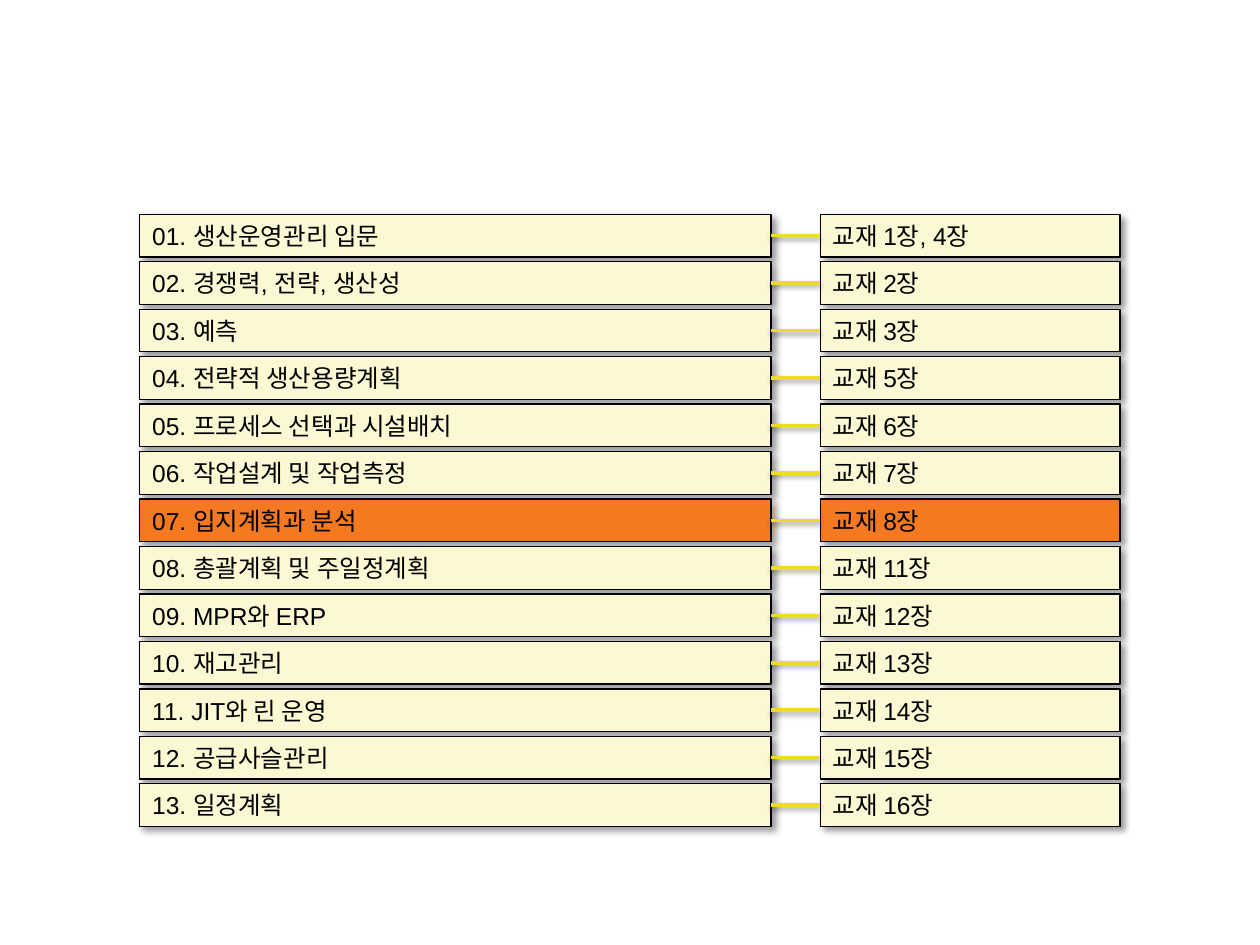
"""Build the course outline slide that pairs lectures with textbook chapters."""
from dataclasses import dataclass

from lxml import etree
from pptx import Presentation
from pptx.dml.color import RGBColor
from pptx.enum.shapes import MSO_CONNECTOR, MSO_SHAPE
from pptx.enum.text import MSO_ANCHOR, MSO_AUTO_SIZE, PP_ALIGN
from pptx.oxml.ns import qn
from pptx.util import Inches, Pt

RECTANGLE = MSO_SHAPE.RECTANGLE
STRAIGHT = MSO_CONNECTOR.STRAIGHT
LEFT = PP_ALIGN.LEFT
MIDDLE = MSO_ANCHOR.MIDDLE
GROW = MSO_AUTO_SIZE.SHAPE_TO_FIT_TEXT
LEFT_SITE, RIGHT_SITE = 1, 3


@dataclass(frozen=True)
class Theme:
    """Colours, type and line sizes of the slide."""
    ink: str = "000000"
    plain: str = "FCF8D4"
    current: str = "F47921"
    link: str = "EEDB28"
    font: str = "Arial"
    size: float = 14
    border: float = 0.75
    link_width: float = 2


THEME = Theme()
CURRENT_ROW = 6
OUTLINE = [
    ("생산운영관리 입문", "1장, 4장"),
    ("경쟁력, 전략, 생산성", "2장"),
    ("예측", "3장"),
    ("전략적 생산용량계획", "5장"),
    ("프로세스 선택과 시설배치", "6장"),
    ("작업설계 및 작업측정", "7장"),
    ("입지계획과 분석", "8장"),
    ("총괄계획 및 주일정계획", "11장"),
    ("MPR와 ERP", "12장"),
    ("재고관리", "13장"),
    ("JIT와 린 운영", "14장"),
    ("공급사슬관리", "15장"),
    ("일정계획", "16장"),
]


def cast_shadow(properties, opacity, blur, distance, angle):
    """Put an outer shadow in the effect list of the shape properties."""
    effects = properties.find(qn("a:effectLst"))
    if effects is None:
        effects = etree.SubElement(properties, qn("a:effectLst"))
    outer = etree.SubElement(
        effects, qn("a:outerShdw"), blurRad=str(Pt(blur)),
        dist=str(Pt(distance)), dir=str(angle * 60000), rotWithShape="0")
    colour = etree.SubElement(outer, qn("a:srgbClr"), val=THEME.ink)
    etree.SubElement(colour, qn("a:alpha"), val=str(opacity * 1000))


def write(frame, text, *, size=THEME.size, color=THEME.ink, font=THEME.font,
          align=LEFT, anchor=MIDDLE):
    """Write one formatted paragraph in a text frame."""
    frame.word_wrap = True
    frame.auto_size = GROW
    frame.vertical_anchor = anchor
    paragraph = frame.paragraphs[0]
    paragraph.alignment = align
    run = paragraph.add_run()
    run.text = text
    run.font.size = Pt(size)
    run.font.name = font
    run.font.color.rgb = RGBColor.from_string(color)


def add_entry(slide, box, text, fill):
    """Add one outlined entry that fills the given box."""
    entry = slide.shapes.add_shape(RECTANGLE, *map(Inches, box))
    entry.shadow.inherit = False
    entry.fill.solid()
    entry.fill.fore_color.rgb = RGBColor.from_string(fill)
    entry.line.color.rgb = RGBColor.from_string(THEME.ink)
    entry.line.width = Pt(THEME.border)
    cast_shadow(entry.element.spPr, opacity=40, blur=4, distance=3, angle=45)
    write(entry.text_frame, text)
    return entry


def add_column(slide, box, texts, row_share=0.9):
    """Stack entries in equal rows of the given box."""
    left, top, width, height = box
    pitch = height / (len(texts) - 1 + row_share)
    return [
        add_entry(slide, (left, top + row * pitch, width, pitch * row_share),
                  text, THEME.current if row == CURRENT_ROW else THEME.plain)
        for row, text in enumerate(texts)
    ]


def add_link(slide, lecture, chapter):
    """Join a lecture to its chapter with a straight line."""
    link = slide.shapes.add_connector(STRAIGHT, 0, 0, 0, 0)
    link.begin_connect(lecture, RIGHT_SITE)
    link.end_connect(chapter, LEFT_SITE)
    link.line.color.rgb = RGBColor.from_string(THEME.link)
    link.line.width = Pt(THEME.link_width)
    cast_shadow(link.element.spPr, opacity=38, blur=3.1, distance=1.6, angle=90)


def add_outline(slide, box, lecture_share=0.644, chapter_share=0.306):
    """Place lectures, chapters and their links in the given box."""
    left, top, width, height = box
    chapter_width = width * chapter_share
    lectures = add_column(
        slide, (left, top, width * lecture_share, height),
        [f"{number:02}. {title}" for number, (title, _) in enumerate(OUTLINE, 1)])
    chapters = add_column(
        slide, (left + width - chapter_width, top, chapter_width, height),
        [f"교재 {chapter}" for _, chapter in OUTLINE])
    for lecture, chapter in zip(lectures, chapters):
        add_link(slide, lecture, chapter)


def main():
    """Build and save the slide."""
    deck = Presentation()
    deck.slide_width, deck.slide_height = Inches(10), Inches(7.5)
    slide = deck.slides.add_slide(deck.slide_layouts[6])
    add_outline(slide, (1.11, 1.7, 7.78, 4.86))
    deck.save("out.pptx")


if __name__ == "__main__":
    main()
